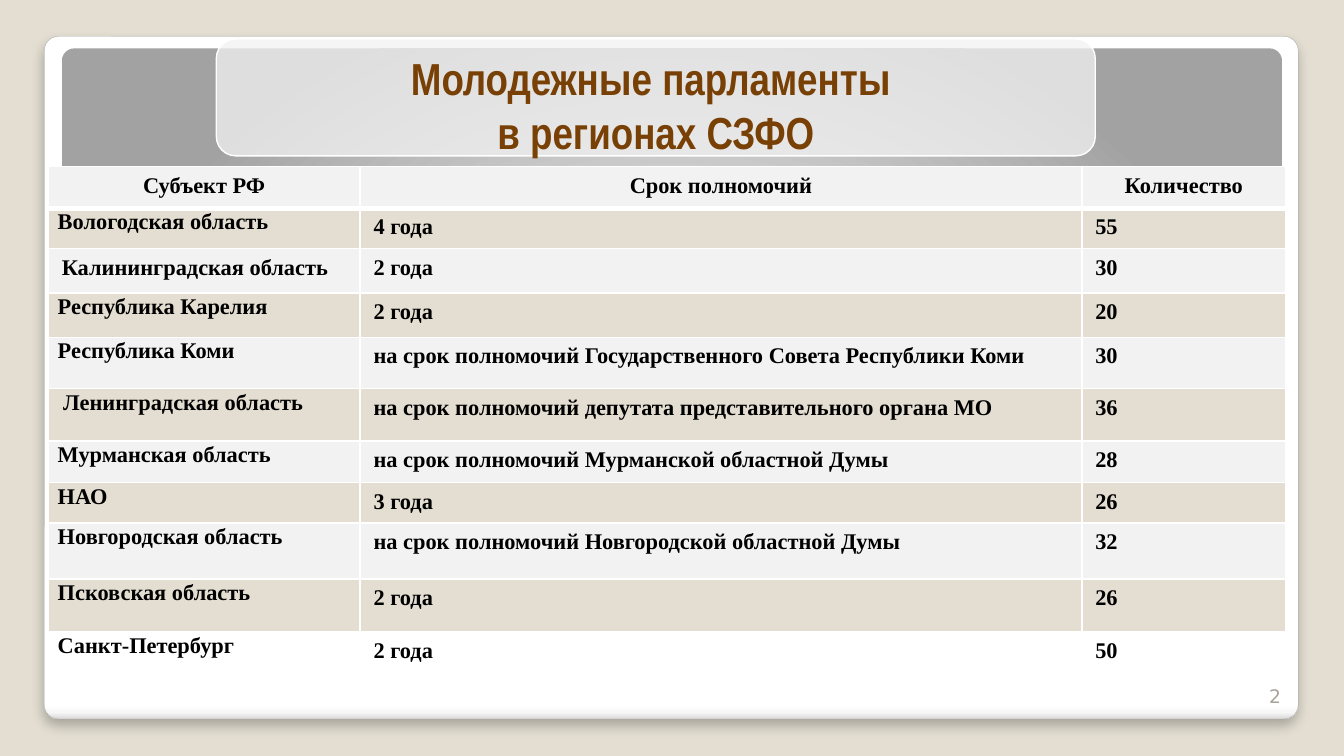
from lxml.etree import SubElement
from pptx import Presentation
from pptx.dml.color import RGBColor
from pptx.enum.shapes import MSO_SHAPE
from pptx.enum.text import MSO_ANCHOR, MSO_AUTO_SIZE, PP_ALIGN
from pptx.oxml import parse_xml
from pptx.oxml.ns import nsdecls, qn
from pptx.util import Inches, Pt

BEIGE, LIGHT, WHITE = "E3DED1", "F2F2F2", "FFFFFF"
TITLE_BOX = (1.61, 0.29, 6.54, 0.87)
COLUMN_WIDTHS = [2.32, 5.37, 1.52]
HEADERS = ["Субъект РФ", "Срок полномочий", "Количество"]
HEADER_HEIGHT = 0.31
# Region, term of office, number of members, row height, left inset, top inset
REGIONS = [
    ("Вологодская область", "4 года", "55", 0.3, 0.07, 0),
    ("Калининградская область", "2 года", "30", 0.33, 0.1, 0.05),
    ("Республика Карелия", "2 года", "20", 0.33, 0.07, 0),
    ("Республика Коми", "на срок полномочий Государственного Совета Республики Коми",
     "30", 0.38, 0.07, 0),
    ("Ленинградская область", "на срок полномочий депутата представительного органа МО",
     "36", 0.39, 0.11, 0),
    ("Мурманская область", "на срок полномочий Мурманской областной Думы",
     "28", 0.31, 0.07, 0),
    ("НАО", "3 года", "26", 0.3, 0.07, 0),
    ("Новгородская область", "на срок полномочий Новгородской областной Думы",
     "32", 0.42, 0.07, 0),
    ("Псковская область", "2 года", "26", 0.39, 0.07, 0),
    ("Санкт-Петербург", "2 года", "50", 0.42, 0.07, 0),
]


def rgb(color):
    return RGBColor.from_string(color)


def style(p, font, size, color, align, bold=False):
    p.alignment = align
    p.font.name = font
    p.font.size = Pt(size)
    p.font.bold = bold
    p.font.color.rgb = rgb(color)


def add_rounded(slide, box):
    sp = slide.shapes.add_shape(MSO_SHAPE.ROUNDED_RECTANGLE, *map(Inches, box))
    sp.shadow.inherit = False
    return sp


def set_outline(sp, color, width):
    sp.line.color.rgb = rgb(color)
    sp.line.width = Pt(width)


def add_panel(slide, box, stops, direction):
    """Add a rounded panel with a gradient; direction is its lin or path XML."""
    sp = add_rounded(slide, box)
    sp.adjustments[0] = 0.021
    sp.line.fill.background()
    marks = "".join(f'<a:gs pos="{pos * 1000}"><a:srgbClr val="{color}"/></a:gs>'
                    for pos, color in stops)
    gradient = parse_xml(f'<a:gradFill {nsdecls("a")} rotWithShape="1">'
                         f'<a:gsLst>{marks}</a:gsLst>{direction}</a:gradFill>')
    sp._element.spPr.find(qn("a:prstGeom")).addnext(gradient)
    return sp


def add_drop_shadow(sp):
    effects = sp._element.spPr.find(qn("a:effectLst"))
    effects.append(parse_xml(
        f'<a:outerShdw {nsdecls("a")} blurRad="{Pt(6)}" dist="{Pt(4)}" dir="5400000"'
        ' algn="tl" rotWithShape="0"><a:srgbClr val="000000"><a:alpha val="25000"/>'
        '</a:srgbClr></a:outerShdw>'))


def add_title_plate(slide):
    sp = add_rounded(slide, TITLE_BOX)
    sp.fill.solid()
    sp.fill.fore_color.rgb = rgb(LIGHT)
    color = sp._element.spPr.find(qn("a:solidFill"))[0]
    SubElement(color, qn("a:alpha")).set("val", "76000")
    set_outline(sp, WHITE, 0.75)


def add_title(slide, lines):
    sp = slide.shapes.title
    sp.left, sp.top, sp.width, sp.height = map(Inches, TITLE_BOX)
    tf = sp.text_frame
    tf.word_wrap = True
    tf.auto_size = MSO_AUTO_SIZE.NONE
    tf.vertical_anchor = MSO_ANCHOR.TOP
    tf.margin_top, tf.margin_bottom = Inches(0.09), 0
    tf.text = "\n".join(lines)
    for p in tf.paragraphs:
        style(p, "Arial Narrow", 24, "784004", PP_ALIGN.CENTER, True)
    # The title placeholder comes first in the tree; bring it above the panels
    slide.shapes._spTree.append(sp._element)


def set_borders(cell, bottom):
    tc_pr = cell._tc.get_or_add_tcPr()
    for side, width in zip("LRTB", (1, 1, 1, bottom)):
        tc_pr.append(parse_xml(
            f'<a:ln{side} {nsdecls("a")} w="{Pt(width)}"><a:solidFill>'
            f'<a:srgbClr val="{WHITE}"/></a:solidFill></a:ln{side}>'))


def fill_cell(cell, text, fill, align, bottom=1):
    set_borders(cell, bottom)
    cell.fill.solid()
    cell.fill.fore_color.rgb = rgb(fill)
    cell.text = text
    style(cell.text_frame.paragraphs[0], "Times New Roman", 12, "000000", align, True)


def add_region_table(slide):
    heights = [HEADER_HEIGHT] + [region[3] for region in REGIONS]
    frame = slide.shapes.add_table(len(heights), len(HEADERS), Inches(0.36), Inches(1.24),
                                   Inches(sum(COLUMN_WIDTHS)), Inches(sum(heights)))
    table = frame.table
    for column, width in zip(table.columns, COLUMN_WIDTHS):
        column.width = Inches(width)
    for row, height in zip(table.rows, heights):
        row.height = Inches(height)
    for c, text in enumerate(HEADERS):
        fill_cell(table.cell(0, c), text, LIGHT, PP_ALIGN.CENTER, bottom=3)
    for r, (*texts, _, left, top) in enumerate(REGIONS, 1):
        fill = WHITE if r == len(REGIONS) else (LIGHT, BEIGE)[r % 2]
        for c, text in enumerate(texts):
            fill_cell(table.cell(r, c), text, fill, PP_ALIGN.JUSTIFY)
        name = table.cell(r, 0)
        name.margin_left, name.margin_right = Inches(left), Inches(0.07)
        name.margin_top = name.margin_bottom = Inches(top)
        if top == 0:
            name.text_frame.paragraphs[0].line_spacing = 1.07


def add_page_number(slide, number):
    sp = slide.shapes.add_textbox(Inches(9.13), Inches(5.01), Inches(0.5), Inches(0.3))
    tf = sp.text_frame
    tf.word_wrap = True
    tf.vertical_anchor = MSO_ANCHOR.BOTTOM
    tf.text = number
    style(tf.paragraphs[0], "DejaVu Sans", 10, "A8A49B", PP_ALIGN.RIGHT)


def main():
    prs = Presentation()
    prs.slide_width = Inches(10)
    prs.slide_height = prs.slide_width * 9 // 16
    slide = prs.slides.add_slide(prs.slide_layouts[5])
    slide.background.fill.solid()
    slide.background.fill.fore_color.rgb = rgb(BEIGE)

    card = add_panel(slide, (0.33, 0.27, 9.33, 5.08),
                     [(0, WHITE), (98, WHITE), (99, "F7F7F7"), (100, "DADADA")],
                     '<a:lin ang="5400000" scaled="0"/>')
    set_outline(card, "A4A4A4", 0.16)
    add_drop_shadow(card)
    add_panel(slide, (0.46, 0.36, 9.08, 4.5),
              [(0, WHITE), (55, "E1E1E1"), (100, "A2A2A2")],
              '<a:path path="circle"><a:fillToRect l="50000" t="175000" r="50000"'
              ' b="-75000"/></a:path>')
    add_title_plate(slide)
    add_title(slide, ["Молодежные парламенты ", "в регионах СЗФО"])
    add_region_table(slide)
    add_page_number(slide, "2")
    prs.save("out.pptx")


if __name__ == "__main__":
    main()
